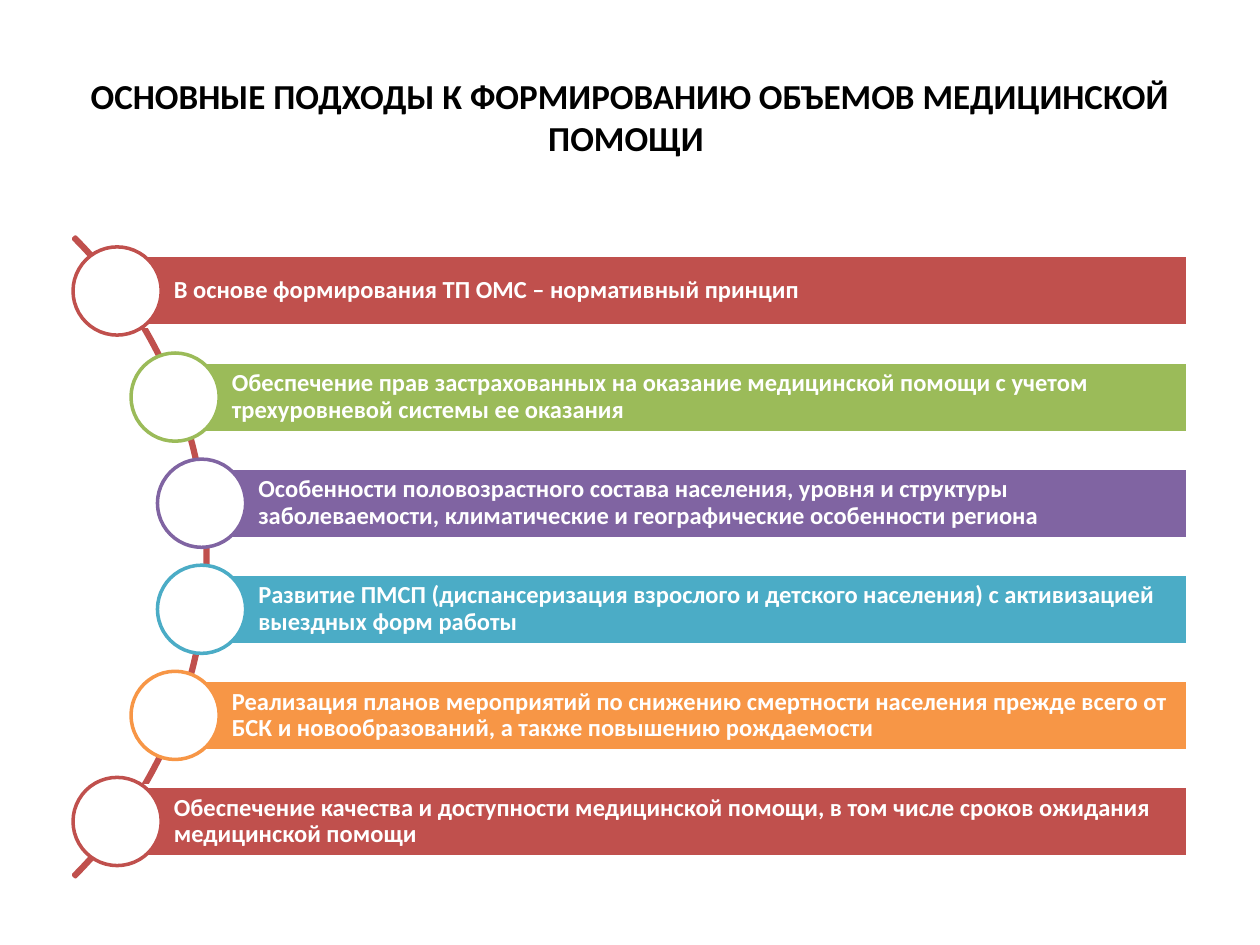
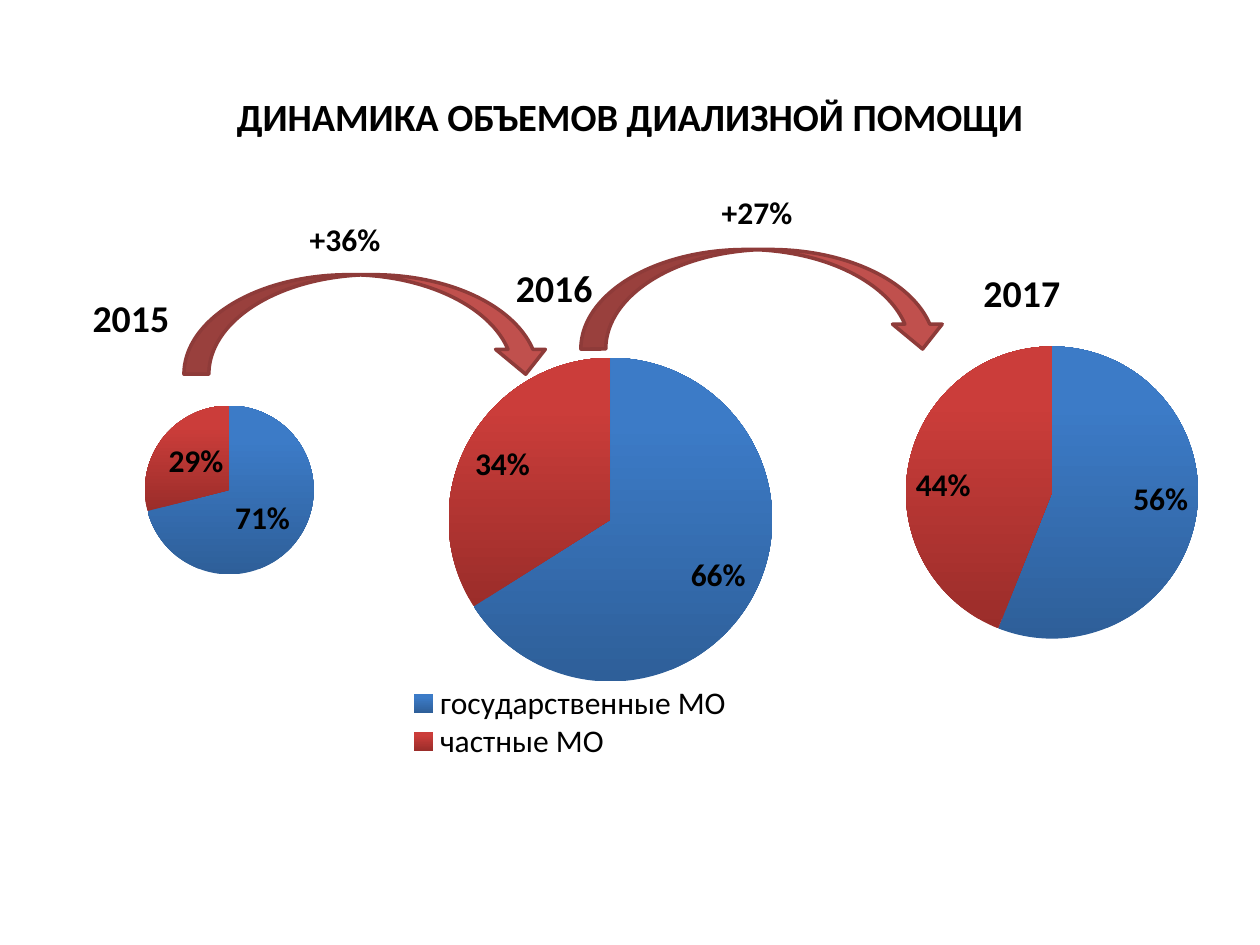
"""Builds two slides on medical care volumes: planning principles and dialysis dynamics."""
from lxml.etree import SubElement
from pptx import Presentation
from pptx.chart.data import CategoryChartData
from pptx.dml.color import RGBColor
from pptx.enum.chart import XL_CHART_TYPE, XL_LABEL_POSITION, XL_LEGEND_POSITION
from pptx.enum.shapes import MSO_SHAPE
from pptx.enum.text import MSO_ANCHOR, PP_ALIGN
from pptx.oxml.ns import qn
from pptx.util import Inches, Pt

FONT = "Calibri"
BLACK, WHITE = "000000", "FFFFFF"
RED, GREEN, PURPLE, TEAL, ORANGE = "C0504D", "9BBB59", "8064A2", "4BACC6", "F79646"
DARK_RED = "8E3B39"
SLICE_GRADIENTS = [("2E5F99", "3C7BC7"), ("9B2D2A", "CB3D3A")]
rgb = RGBColor.from_string


def add_figure(slide, preset, box, fill, line):
    figure = slide.shapes.add_shape(preset, *map(Inches, box))
    figure.shadow.inherit = False
    if fill:
        figure.fill.solid()
        figure.fill.fore_color.rgb = rgb(fill)
    else:
        figure.fill.background()
    figure.line.color.rgb = rgb(line)
    figure.line.width = Pt(2)
    return figure


def place_in_chart(element, index, frame, left, top, width=None, height=None):
    for old in element.findall(qn("c:layout")):
        element.remove(old)
    layout = SubElement(element, qn("c:layout"))
    element.insert(index, layout)
    manual = SubElement(layout, qn("c:manualLayout"))
    if element.tag == qn("c:plotArea"):
        SubElement(manual, qn("c:layoutTarget")).set("val", "inner")
    for mode in ("xMode", "yMode"):
        SubElement(manual, qn(f"c:{mode}")).set("val", "edge")
    frame_left, frame_top, frame_width, frame_height = frame
    shares = {"x": (left - frame_left) / frame_width, "y": (top - frame_top) / frame_height}
    if width:
        shares.update(w=width / frame_width, h=height / frame_height)
    for side, share in shares.items():
        SubElement(manual, qn(f"c:{side}")).set("val", f"{share:.4f}")


prs = Presentation()
prs.slide_width, prs.slide_height = Inches(10), Inches(7.5)

slides = []
for heading, size in [
    ("ОСНОВНЫЕ ПОДХОДЫ К ФОРМИРОВАНИЮ ОБЪЕМОВ МЕДИЦИНСКОЙ ПОМОЩИ ", 20),
    ("ДИНАМИКА ОБЪЕМОВ ДИАЛИЗНОЙ ПОМОЩИ", 22),
]:
    slide = prs.slides.add_slide(prs.slide_layouts[5])
    title = slide.shapes.title
    title.left, title.top, title.width, title.height = map(Inches, (0.5, 0.3, 9, 1.25))
    title.text_frame.vertical_anchor = MSO_ANCHOR.MIDDLE
    paragraph = title.text_frame.paragraphs[0]
    paragraph.alignment = PP_ALIGN.CENTER
    run = paragraph.add_run()
    run.text = heading
    run.font.name, run.font.size, run.font.bold = FONT, Pt(size), True
    run.font.color.rgb = rgb(BLACK)
    slides.append(slide)
approaches, dialysis = slides

spine = add_figure(approaches, MSO_SHAPE.BLOCK_ARC, (-5.53, 0.83, 7.18, 7.18), None, RED)
for number, adjustment in enumerate((189, 27, 0.003)):
    spine.adjustments[number] = adjustment

principles = [
    (0.93, RED, "В основе формирования ТП ОМС – нормативный принцип"),
    (1.39, GREEN, "Обеспечение прав застрахованных на оказание медицинской помощи "
     "с учетом трехуровневой системы ее оказания"),
    (1.6, PURPLE, "Особенности половозрастного состава населения, уровня и структуры "
     "заболеваемости, климатические и географические особенности региона"),
    (1.6, TEAL, "Развитие ПМСП (диспансеризация взрослого и детского населения) "
     "с активизацией выездных форм работы"),
    (1.39, ORANGE, "Реализация планов мероприятий по снижению смертности населения прежде "
     "всего от БСК и новообразований, а также повышению рождаемости"),
    (0.93, RED, "Обеспечение качества и доступности медицинской помощи, в том числе "
     "сроков ожидания медицинской помощи"),
]
first_top, last_top, bars_right = 2.03, 6.24, 9.43
pitch = (last_top - first_top) / (len(principles) - 1)
for row, (left, color, principle) in enumerate(principles):
    top = first_top + row * pitch
    bar = add_figure(approaches, MSO_SHAPE.RECTANGLE,
                     (left, top, bars_right - left, 0.56), color, WHITE)
    frame = bar.text_frame
    frame.word_wrap = True
    frame.vertical_anchor = MSO_ANCHOR.MIDDLE
    frame.margin_left = Inches(0.45)
    frame.margin_top = frame.margin_right = frame.margin_bottom = Inches(0.04)
    paragraph = frame.paragraphs[0]
    paragraph.alignment = PP_ALIGN.LEFT
    paragraph.line_spacing = 0.9
    run = paragraph.add_run()
    run.text = principle
    run.font.name, run.font.size, run.font.bold = FONT, Pt(14), True
    run.font.color.rgb = rgb(WHITE)
    add_figure(approaches, MSO_SHAPE.OVAL, (left - 0.35, top - 0.07, 0.7, 0.7), WHITE, color)

years = [
    ("2015", ("1", "2"), (0.71, 0.29), (0, 2.25, 3.46, 2.91), (1.15, 3.22, 1.34), (0.68, 2.26)),
    ("2016", ("государственные МО", "частные МО"), (0.66, 0.34),
     (2.48, 2.02, 4.72, 4.02), (3.56, 2.84, 2.57), (4.04, 2.02)),
    ("2017", ("1", "2"), (0.56, 0.44), (6.5, 1.94, 3.23, 3.27), (7.19, 2.75, 2.32), (7.75, 2.06)),
]
for year, owners, shares, frame, (pie_left, pie_top, diameter), year_place in years:
    data = CategoryChartData(number_format="0%")
    data.categories = owners
    data.add_series(year, shares)
    chart = dialysis.shapes.add_chart(
        XL_CHART_TYPE.PIE, *map(Inches, frame), data).chart
    chart.font.name, chart.font.size = FONT, Pt(18)
    chart.font.color.rgb = rgb(BLACK)

    chart.has_title = True
    run = chart.chart_title.text_frame.paragraphs[0].add_run()
    run.text = year
    run.font.name, run.font.size, run.font.bold = FONT, Pt(21.6), True
    run.font.color.rgb = rgb(BLACK)
    place_in_chart(chart.chart_title._element, 1, frame, *year_place)

    plot = chart.plots[0]
    plot.vary_by_categories = True
    plot.has_data_labels = True
    labels = plot.data_labels
    labels.show_value, labels.show_percentage = True, False
    labels.number_format, labels.number_format_is_linked = "0%", False
    labels.position = XL_LABEL_POSITION.INSIDE_END
    labels.font.name, labels.font.size, labels.font.bold = FONT, Pt(18), True
    labels.font.color.rgb = rgb(BLACK)
    for index, gradient in enumerate(SLICE_GRADIENTS):
        fill = plot.series[0].points[index].format.fill
        fill.gradient()
        fill.gradient_angle = 90
        for stop, color, position in zip(fill.gradient_stops, gradient, (0, 0.8)):
            stop.color.rgb = rgb(color)
            stop.position = position
    place_in_chart(chart._chartSpace.chart.plotArea, 0, frame,
                   pie_left, pie_top, diameter, diameter)

    chart.has_legend = year == "2016"
    if chart.has_legend:
        chart.legend.position = XL_LEGEND_POSITION.BOTTOM
        chart.legend.include_in_layout = False
        chart.legend.font.name, chart.legend.font.size = FONT, Pt(18)
        chart.legend.font.color.rgb = rgb(BLACK)
        place_in_chart(chart.legend._element, 1, frame, 3.2, 5.43, 2.65, 0.6)

growths = [("+36%", (1.46, 2.18), (2.36, 1.7)), ("+27%", (4.61, 1.98), (5.63, 1.48))]
for growth, arrow_place, label_place in growths:
    add_figure(dialysis, MSO_SHAPE.CURVED_DOWN_ARROW, (*arrow_place, 2.91, 0.79), RED, DARK_RED)
    label = dialysis.shapes.add_textbox(*map(Inches, (*label_place, 1.1, 0.4)))
    label.text_frame.word_wrap = True
    run = label.text_frame.paragraphs[0].add_run()
    run.text = growth
    run.font.name, run.font.size, run.font.bold = FONT, Pt(18), True
    run.font.color.rgb = rgb(BLACK)

prs.save("out.pptx")
